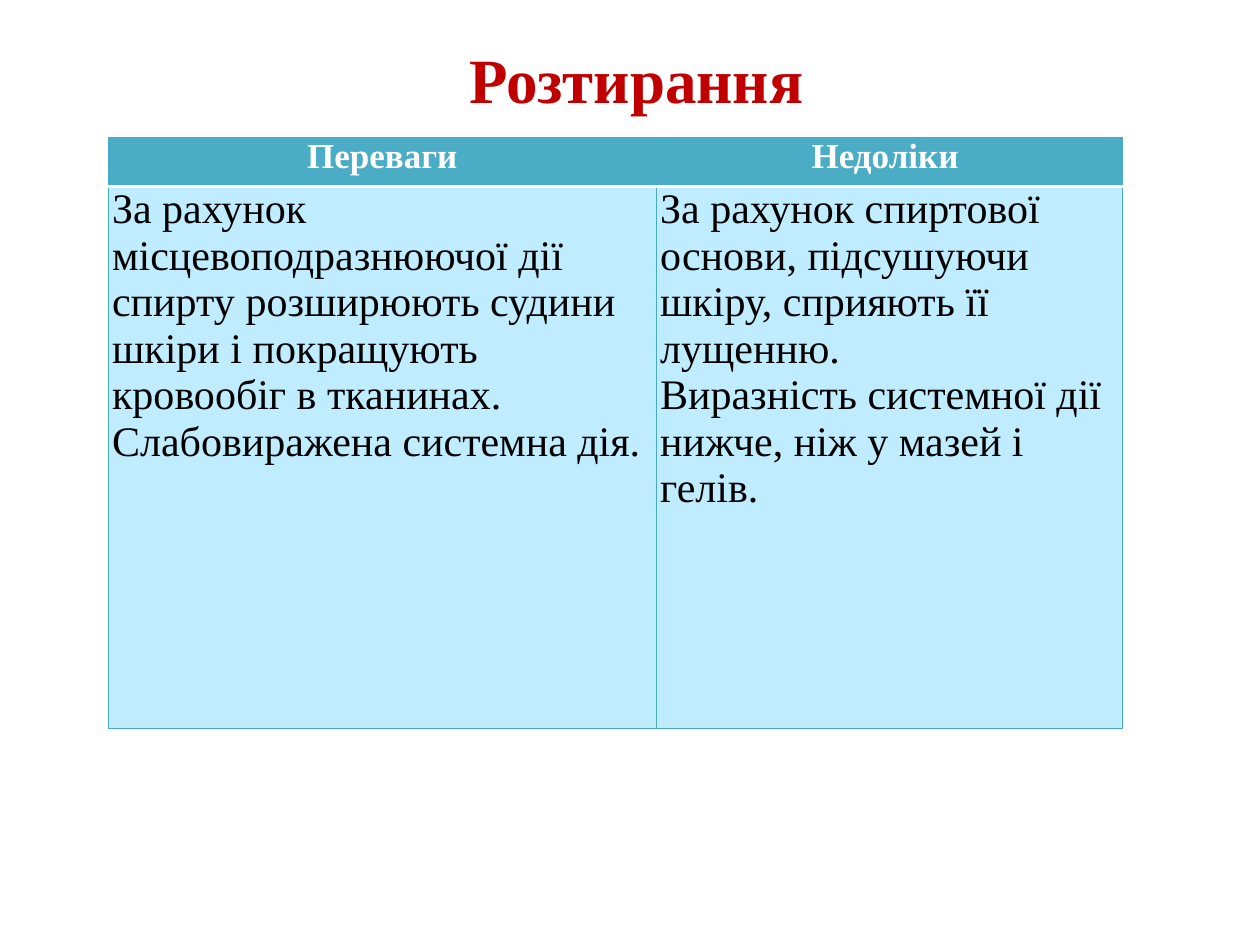
"""Build a slide with a two-column table of advantages and drawbacks."""
from lxml import etree
from pptx import Presentation
from pptx.dml.color import RGBColor
from pptx.enum.text import MSO_ANCHOR, PP_ALIGN
from pptx.oxml.ns import qn
from pptx.util import Inches, Pt

CENTER = PP_ALIGN.CENTER
LEFT = PP_ALIGN.LEFT
MIDDLE = MSO_ANCHOR.MIDDLE
FONT = "Times New Roman"
COLORS = {
    "title": "C00000",
    "header": "4BACC6",
    "body": "BFECFF",
    "border": "46AAC5",
    "white": "FFFFFF",
    "black": "000000",
}


def add_text(paragraph, text, size, color, bold, alignment):
    paragraph.alignment = alignment
    run = paragraph.add_run()
    run.text = text
    run.font.name = FONT
    run.font.size = Pt(size)
    run.font.bold = bold
    run.font.color.rgb = RGBColor.from_string(COLORS[color])


def set_border(cell, position, side, color, width):
    line = etree.Element(qn(f"a:ln{side}"), w=str(Pt(width)))
    fill = etree.SubElement(line, qn("a:solidFill"))
    etree.SubElement(fill, qn("a:srgbClr"), val=COLORS[color])
    cell._tc.get_or_add_tcPr().insert(position, line)


presentation = Presentation()
presentation.slide_width = Inches(10)
presentation.slide_height = Inches(7.5)
slide = presentation.slides.add_slide(presentation.slide_layouts[6])

title = slide.shapes.add_textbox(Inches(0.55), Inches(0), Inches(9), Inches(1.25))
title.text_frame.word_wrap = True
title.text_frame.vertical_anchor = MIDDLE
add_text(title.text_frame.paragraphs[0], "Розтирання", 36, "title", True, CENTER)

rows = [
    [["Переваги"], ["Недоліки "]],
    [
        [
            "За рахунок місцевоподразнюючої дії спирту розширюють судини шкіри і покращують кровообіг в тканинах.",
            "Слабовиражена системна дія.",
        ],
        [
            "За рахунок спиртової основи, підсушуючи шкіру, сприяють її лущенню.",
            "Виразність системної дії нижче, ніж у мазей і гелів.",
        ],
    ],
]
row_styles = [
    {"height": 0.39, "fill": "header", "text": (20, "white", True, CENTER)},
    {"height": 4.3, "fill": "body", "text": (24, "black", False, LEFT)},
]
table = slide.shapes.add_table(
    2, 2, Inches(0.86), Inches(1.09), Inches(8.05), Inches(4.69)
).table
for column, width in zip(table.columns, (4.35, 3.7)):
    column.width = Inches(width)

for row_index, (row, style) in enumerate(zip(rows, row_styles)):
    table.rows[row_index].height = Inches(style["height"])
    divider_side = "B" if row_index == 0 else "T"
    for column_index, texts in enumerate(row):
        cell = table.cell(row_index, column_index)
        cell.margin_left = cell.margin_right = Inches(0.03)
        cell.margin_top = cell.margin_bottom = Inches(0)
        cell.fill.solid()
        cell.fill.fore_color.rgb = RGBColor.from_string(COLORS[style["fill"]])
        for position, side in enumerate("LRTB"):
            color, width = ("white", 2) if side == divider_side else ("border", 0.75)
            set_border(cell, position, side, color, width)
        for text_index, text in enumerate(texts):
            frame = cell.text_frame
            paragraph = frame.add_paragraph() if text_index else frame.paragraphs[0]
            add_text(paragraph, text, *style["text"])

presentation.save("out.pptx")
